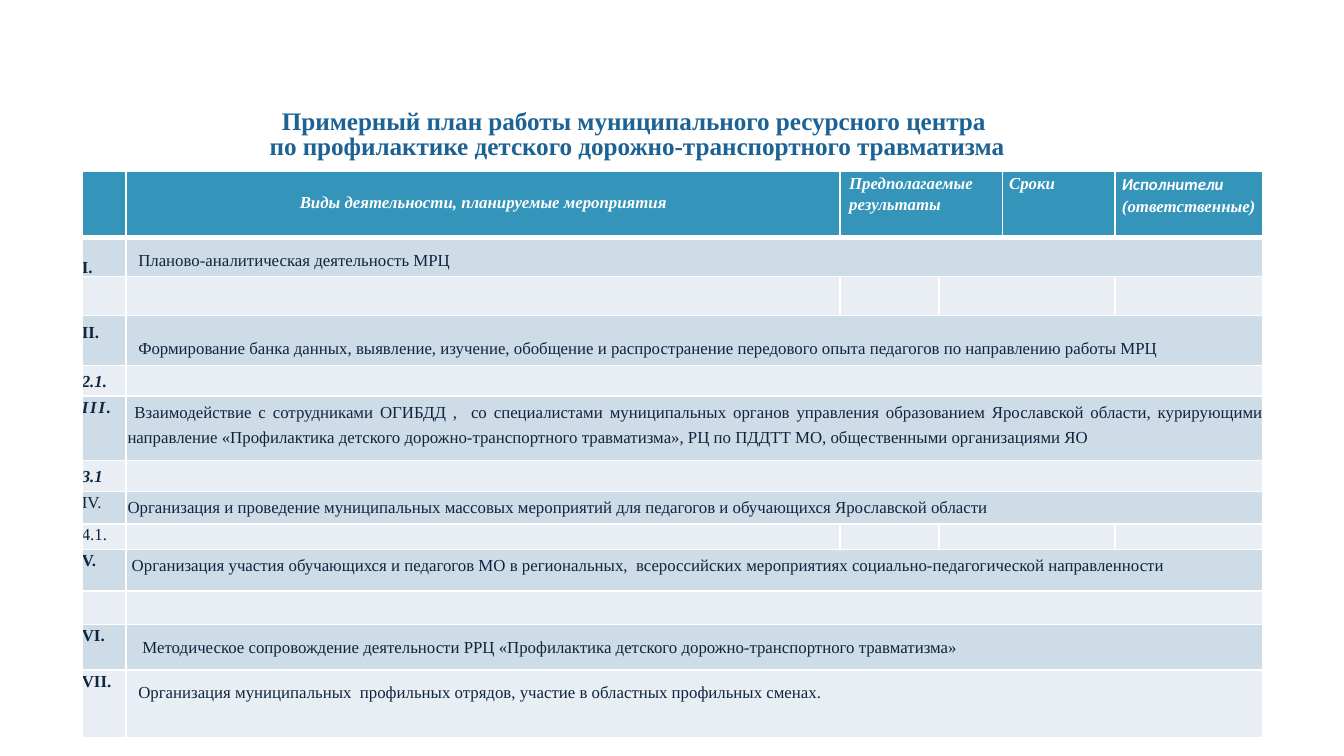
from lxml.etree import SubElement
from pptx import Presentation
from pptx.dml.color import RGBColor
from pptx.enum.text import MSO_ANCHOR as Anchor, PP_ALIGN as Align
from pptx.oxml.ns import qn
from pptx.util import Inches, Pt

WHITE = RGBColor(0xFF, 0xFF, 0xFF)
TITLE_BLUE = RGBColor(0x1D, 0x62, 0x95)
HEADER_BLUE = RGBColor(0x34, 0x94, 0xBA)
SECTION_BLUE = RGBColor(0xCE, 0xDC, 0xE7)
ENTRY_BLUE = RGBColor(0xE8, 0xEE, 0xF3)
NAVY = RGBColor(0x0F, 0x24, 0x3E)
SERIF = "Times New Roman"

# The slide is a square grid, 1000 units wide: left, top, width, height
GRID_COLUMNS = 1000
TITLE_BOX = (49, 78, 850, 49)
PLAN_BOX = (60.9, 127.4, 879, 426)
COLUMN_UNITS = (33, 531, 74, 47, 84, 110)
ROW_UNITS = (49, 25, 29, 37, 23, 48, 23, 24, 19, 31, 25, 34, 50)

TITLE = ("Примерный план работы муниципального ресурсного центра \v"
         "по профилактике детского дорожно-транспортного травматизма")
# Column: text, side inset
HEADERS = {
    1: ("Виды деятельности, планируемые мероприятия", 0.05),
    2: ("Предполагаемые результаты", 0.07),
    4: ("Сроки", 0.05),
    5: ("Исполнители\n(ответственные)", 0.05),
}
SPLIT_ROWS = (2, 8)
# Row: number, bold, italic, anchor, line height
NUMBERS = {
    1: ("I.", True, False, Anchor.BOTTOM, 14),
    3: ("II.", True, False, Anchor.TOP, 14),
    4: ("2.1.", True, True, Anchor.MIDDLE, 11),
    5: ("III.", True, True, Anchor.TOP, 11),
    6: ("3.1", True, True, Anchor.MIDDLE, 11),
    7: ("IV.", False, False, Anchor.TOP, 11),
    8: ("4.1.", False, False, Anchor.TOP, 11),
    9: ("V.", True, False, Anchor.TOP, 11),
    11: ("VI.", True, False, Anchor.TOP, 11),
    12: ("VII.", True, False, Anchor.TOP, 11),
}
WIDE, TIGHT = (0.09, 0.05), (0.01, 0)
# Row: text, insets, anchor, alignment, line height
ACTIVITIES = {
    1: ("Планово-аналитическая деятельность МРЦ", WIDE, Anchor.BOTTOM, Align.LEFT, 14),
    3: ("Формирование банка данных, выявление, изучение, обобщение и распространение "
        "передового опыта педагогов по направлению работы МРЦ",
        WIDE, Anchor.BOTTOM, Align.LEFT, 13.7),
    5: (" Взаимодействие с сотрудниками ОГИБДД ,  со специалистами муниципальных органов "
        "управления образованием Ярославской области, курирующими направление "
        "«Профилактика детского дорожно-транспортного травматизма», РЦ по ПДДТТ МО, "
        "общественными организациями ЯО", TIGHT, Anchor.TOP, Align.JUSTIFY, 13.7),
    7: ("Организация и проведение муниципальных массовых мероприятий для педагогов и "
        "обучающихся Ярославской области", TIGHT, Anchor.TOP, Align.LEFT, 13.7),
    9: (" Организация участия обучающихся и педагогов МО в региональных,  всероссийских "
        "мероприятиях социально-педагогической направленности",
        TIGHT, Anchor.TOP, Align.LEFT, 13.7),
    11: (" Методическое сопровождение деятельности РРЦ «Профилактика детского "
         "дорожно-транспортного травматизма»", WIDE, Anchor.TOP, Align.LEFT, 13.7),
    12: ("Организация муниципальных  профильных отрядов, участие в областных профильных "
         "сменах.", WIDE, Anchor.TOP, Align.LEFT, 13.7),
}


def style_font(font, size, color, bold=False, italic=False, name=SERIF):
    font.size, font.name, font.bold, font.italic = Pt(size), name, bold, italic
    font.color.rgb = color


def fill_title(title, box):
    title.left, title.top, title.width, title.height = box
    frame = title.text_frame
    frame.text = TITLE
    frame.word_wrap = True
    frame.vertical_anchor = Anchor.TOP
    para = frame.paragraphs[0]
    para.alignment = Align.CENTER
    para.line_spacing = 0.8
    for span in para.runs:
        style_font(span.font, 13.5, TITLE_BLUE, bold=True)


def draw_borders(cell, top, bottom):
    properties = cell._tc.get_or_add_tcPr()
    sides = (("a:lnL", 1), ("a:lnR", 1), ("a:lnT", top), ("a:lnB", bottom))
    for index, (tag, width) in enumerate(sides):
        line = SubElement(properties, qn(tag), w=str(Pt(width)))
        SubElement(SubElement(line, qn("a:solidFill")), qn("a:srgbClr"), val=str(WHITE))
        properties.insert(index, line)


def write_cell(cell, text, insets, anchor, align, spacing, color, bold=False, italic=False):
    cell.margin_left = cell.margin_right = Inches(insets[0])
    cell.margin_top = cell.margin_bottom = Inches(insets[1])
    cell.vertical_anchor = anchor
    cell.text_frame.text = text
    for para in cell.text_frame.paragraphs:
        para.alignment = align
        para.line_spacing = spacing
        for span in para.runs:
            style_font(span.font, 9, color, bold, italic)


def prepare_cells(table):
    """Give every cell its fill, borders and compact empty text."""
    for row in range(len(ROW_UNITS)):
        fill = SECTION_BLUE if row % 2 else ENTRY_BLUE
        if row == 0:
            fill = HEADER_BLUE
        for column in range(len(COLUMN_UNITS)):
            cell = table.cell(row, column)
            cell.fill.solid()
            cell.fill.fore_color.rgb = fill
            draw_borders(cell, 3 if row == 1 else 1, 3 if row == 0 else 1)
            cell.margin_left = cell.margin_right = cell.margin_top = cell.margin_bottom = 0
            cell.text_frame.paragraphs[0].font.size = Pt(9)


def merge_cells(table):
    table.cell(0, 2).merge(table.cell(0, 3))
    for row in range(1, len(ROW_UNITS)):
        first, last = (3, 4) if row in SPLIT_ROWS else (1, 5)
        table.cell(row, first).merge(table.cell(row, last))


def add_plan(page, box, unit):
    frame = page.shapes.add_table(len(ROW_UNITS), len(COLUMN_UNITS), *box)
    table = frame.table
    table.horz_banding = False
    for column, units in zip(table.columns, COLUMN_UNITS):
        column.width = units * unit
    for row, units in zip(table.rows, ROW_UNITS):
        row.height = units * unit
    frame.height = box[3]
    prepare_cells(table)
    merge_cells(table)

    for column, (text, inset) in HEADERS.items():
        main = column == 1
        write_cell(table.cell(0, column), text, (inset, 0),
                   Anchor.MIDDLE if main else Anchor.TOP,
                   Align.CENTER if main else Align.LEFT, 1.15, WHITE, True, True)
    table.cell(0, 1).margin_bottom = Inches(0.04)
    table.cell(0, 5).text_frame.paragraphs[0].runs[0].font.name = "Calibri"

    for row, (text, bold, italic, anchor, spacing) in NUMBERS.items():
        write_cell(table.cell(row, 0), text, (0, 0), anchor, Align.LEFT,
                   Pt(spacing), NAVY, bold, italic)
    spaced_number = table.cell(5, 0).text_frame.paragraphs[0].runs[0]
    spaced_number.font._element.set("spc", "100")

    for row, (text, insets, anchor, align, spacing) in ACTIVITIES.items():
        write_cell(table.cell(row, 1), text, insets, anchor, align, Pt(spacing), NAVY)


def main():
    deck = Presentation()
    deck.slide_width = Inches(10)
    deck.slide_height = deck.slide_width * 9 // 16
    unit = deck.slide_width // GRID_COLUMNS
    title_box, plan_box = ([round(units * unit) for units in box]
                           for box in (TITLE_BOX, PLAN_BOX))
    page = deck.slides.add_slide(deck.slide_layouts[5])
    fill_title(page.shapes.title, title_box)
    add_plan(page, plan_box, unit)
    deck.save("out.pptx")


if __name__ == "__main__":
    main()
